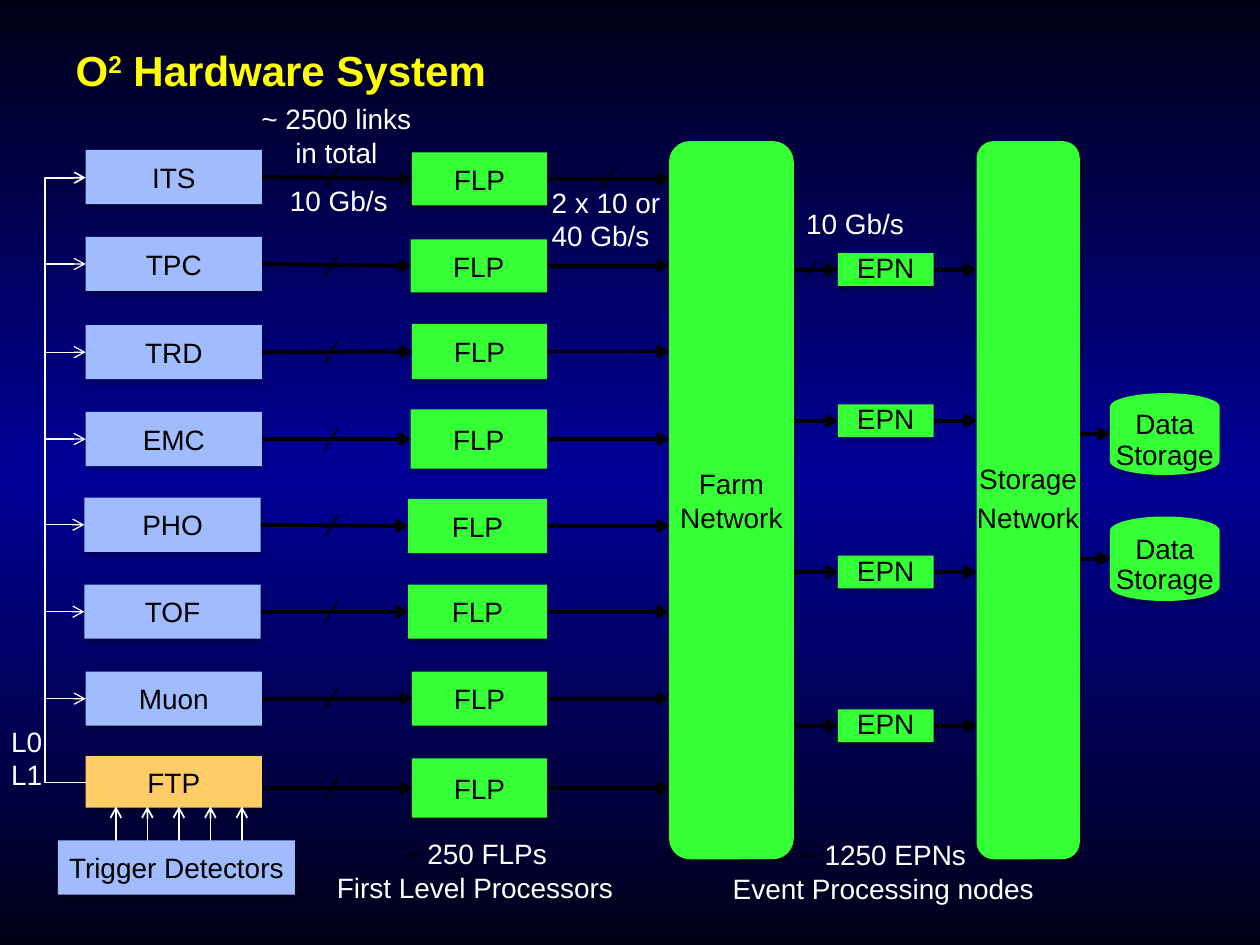
from copy import deepcopy
from typing import NamedTuple

from lxml.etree import SubElement
from pptx import Presentation
from pptx.dml.color import RGBColor
from pptx.enum.shapes import MSO_CONNECTOR as LINK, MSO_SHAPE as SHAPE
from pptx.enum.text import MSO_ANCHOR as ANCHOR, MSO_AUTO_SIZE as FIT, PP_ALIGN as ALIGN
from pptx.oxml.ns import qn
from pptx.util import Inches, Pt

BLACK = RGBColor(0x00, 0x00, 0x00)
WHITE = RGBColor(0xFF, 0xFF, 0xFF)
YELLOW = RGBColor(0xFF, 0xFF, 0x00)
GREEN = RGBColor(0x35, 0xFF, 0x35)
BLUE = RGBColor(0xA0, 0xBC, 0xFE)
ORANGE = RGBColor(0xFF, 0xCC, 0x66)
NIGHT = RGBColor(0x00, 0x00, 0x16)
NAVY = RGBColor(0x00, 0x00, 0x99)

TOP, LEFT, BOTTOM, RIGHT = range(4)
BUS_X, FARM_X, FARM_END, STORAGE_X, STORAGE_END = 0.35, 5.31, 6.3, 7.75, 8.57


class Frame(NamedTuple):
    left: float
    top: float
    width: float
    height: float

    def lengths(self) -> list:
        return [Inches(value) for value in self]


class Row(NamedTuple):
    name: str
    detector: Frame
    processor: Frame
    color: RGBColor = BLUE


class Label(NamedTuple):
    frame: Frame
    paragraphs: list  # each a list of (text, color)
    align: ALIGN = ALIGN.LEFT


ROWS = [
    Row("ITS", Frame(0.68, 1.19, 1.4, 0.43), Frame(3.27, 1.21, 1.07, 0.42)),
    Row("TPC", Frame(0.68, 1.88, 1.4, 0.43), Frame(3.26, 1.9, 1.08, 0.42)),
    Row("TRD", Frame(0.68, 2.58, 1.4, 0.43), Frame(3.27, 2.57, 1.07, 0.44)),
    Row("EMC", Frame(0.68, 3.27, 1.4, 0.43), Frame(3.26, 3.25, 1.08, 0.47)),
    Row("PHO", Frame(0.67, 3.95, 1.4, 0.43), Frame(3.24, 3.96, 1.1, 0.43)),
    Row("TOF", Frame(0.67, 4.64, 1.4, 0.43), Frame(3.24, 4.64, 1.1, 0.43)),
    Row("Muon", Frame(0.68, 5.33, 1.4, 0.43), Frame(3.27, 5.33, 1.07, 0.43)),
    Row("FTP", Frame(0.68, 6, 1.4, 0.41), Frame(3.27, 6.02, 1.07, 0.47), ORANGE),
]
LABELS = [
    Label(Frame(4.28, 1.42, 1.14, 0.64), [[("2 x 10 or \n40 Gb/s", WHITE)]]),
    Label(Frame(2.14, 1.41, 1.05, 0.37), [[(" ", BLACK), ("10 Gb/s", WHITE)]]),
    Label(Frame(-0.01, 5.7, 0.45, 0.64), [[("L0\nL1", WHITE)]]),
    Label(Frame(1.97, 0.76, 1.4, 0.64), [[("~ 2500 links\nin total", WHITE)]], ALIGN.CENTER),
    Label(Frame(2.56, 6.59, 2.42, 0.64),
          [[("~ ", BLACK), ("250 FLPs", WHITE)], [("First Level Processors", WHITE)]], ALIGN.CENTER),
    Label(Frame(6.3, 1.59, 0.99, 0.37), [[("10 Gb/s", WHITE)]]),
    Label(Frame(5.7, 6.6, 2.62, 0.64),
          [[("~ ", BLACK), ("1250 EPNs", WHITE)], [("Event Processing nodes", WHITE)]], ALIGN.CENTER),
]


def add_span(para, text: str, color: RGBColor, size: int = 16):
    """Add text as runs, with a line break at each newline."""
    for index, line in enumerate(text.split("\n")):
        if index:
            para.add_line_break()
        span = para.add_run()
        span.text = line
        span.font.name = "Arial"
        span.font.size = Pt(size)
        span.font.color.rgb = color
    return span


def write(frame, paragraphs: list, align: ALIGN, tight: bool = False) -> None:
    for index, spans in enumerate(paragraphs):
        para = frame.add_paragraph() if index else frame.paragraphs[0]
        para.alignment = align
        if tight:
            para.line_spacing = 0.9
            para.space_before = Pt(4.8)
        for text, color in spans:
            add_span(para, text, color)


def add_label(page, label: Label) -> None:
    box = page.shapes.add_textbox(*label.frame.lengths())
    box.text_frame.word_wrap = False
    box.text_frame.auto_size = FIT.SHAPE_TO_FIT_TEXT
    write(box.text_frame, label.paragraphs, label.align)


def add_block(page, frame: Frame, lines: list, color: RGBColor = GREEN,
              kind: SHAPE = SHAPE.RECTANGLE, inset: float = 0.2, tight: bool = False):
    box = page.shapes.add_shape(kind, *frame.lengths())
    box.fill.solid()
    box.fill.fore_color.rgb = color
    box.line.fill.background()
    box.shadow.inherit = False
    effects = box._element.spPr.find(qn("a:effectLst"))
    shadow = SubElement(effects, qn("a:outerShdw"), blurRad=str(Pt(3.1)), dist=str(Pt(1.8)),
                        dir="5400000", rotWithShape="0")
    tint = SubElement(shadow, qn("a:srgbClr"), val="000000")
    SubElement(tint, qn("a:alpha"), val="35000")
    text = box.text_frame
    text.word_wrap = False
    text.vertical_anchor = ANCHOR.MIDDLE
    text.margin_left = text.margin_right = Inches(inset)
    write(text, [[(line, BLACK)] for line in lines], ALIGN.CENTER, tight)
    return box


def add_line(page, x1: float, y1: float, x2: float, y2: float, color: RGBColor = BLACK,
             width: float = 2.25, arrow: bool = True, kind: LINK = LINK.STRAIGHT):
    line = page.shapes.add_connector(kind, *(Inches(value) for value in (x1, y1, x2, y2)))
    line.line.color.rgb = color
    line.line.width = Pt(width)
    if arrow:
        SubElement(line._element.spPr.find(qn("a:ln")), qn("a:tailEnd"), type="arrow")
    SubElement(line._element.spPr, qn("a:effectLst"))
    return line


def add_slash(page, x: float, y: float, width: float = 0.1, height: float = 0.17) -> None:
    """Mark a link as a bundle, centred on x, y."""
    add_line(page, x + width / 2, y - height / 2, x - width / 2, y + height / 2, width=1, arrow=False)


def middle(frame: Frame) -> float:
    return frame.top + frame.height / 2


def add_row(page, row: Row) -> None:
    detector = add_block(page, row.detector, [row.name], row.color, inset=0.05)
    processor = add_block(page, row.processor, ["FLP"])
    y = middle(row.processor)
    trigger = row.name == "FTP"
    link = add_line(page, row.detector.left + row.detector.width, y, row.processor.left, y)
    if not trigger:
        link.begin_connect(detector, RIGHT)
    link.end_connect(processor, LEFT)
    add_line(page, 4.34, y, FARM_X, y).begin_connect(processor, RIGHT)
    add_slash(page, 2.63, y)
    if not trigger and row.name != "ITS":  # these two are ends of the trigger bus
        y = middle(row.detector)
        add_line(page, BUS_X, y, row.detector.left, y, WHITE, 0.75).end_connect(detector, LEFT)


def set_background(page) -> None:
    fill = page.background.fill
    fill.gradient()
    fill.gradient_angle = 90
    stops = page._element.find(".//" + qn("a:gsLst"))
    stops.append(deepcopy(stops[-1]))
    for stop, color, position in zip(fill.gradient_stops, (NIGHT, NAVY, NIGHT), (0, 0.5, 1)):
        stop.color.rgb = color
        stop.position = position


def add_title(page) -> None:
    title = page.shapes.title
    title.left, title.top, title.width, title.height = Frame(0.5, 0.3, 9, 1.25).lengths()
    title.text_frame.vertical_anchor = ANCHOR.TOP
    para = title.text_frame.paragraphs[0]
    para.alignment = ALIGN.LEFT
    for text in ("O", "2", " Hardware System"):
        span = add_span(para, text, YELLOW, 24)
        span.font.bold = True
        if text == "2":
            span.font._element.set("baseline", "30000")


def main() -> None:
    deck = Presentation()
    deck.slide_width, deck.slide_height = Inches(10), Inches(7.5)
    page = deck.slides.add_slide(deck.slide_layouts[5])
    set_background(page)
    add_title(page)

    # Detectors and first level processors
    for row in ROWS:
        add_row(page, row)
    add_slash(page, 4.83, 1.41)

    # Trigger bus, turned half round so that it runs from FTP up to ITS
    bus = add_line(page, 0.68, 1.41, 0.69, 6.21, WHITE, 1, kind=LINK.ELBOW)
    bus._element.spPr.find(qn("a:xfrm")).set("rot", "10800000")
    guides = bus._element.spPr.find(qn("a:prstGeom")).find(qn("a:avLst"))
    SubElement(guides, qn("a:gd"), name="adj1", fmla="val 3400000")

    # Trigger detectors
    for index in range(5):
        x = 0.92 + 0.25 * index
        add_line(page, x, 6.7, x, 6.4, WHITE, 1)
    add_block(page, Frame(0.46, 6.67, 1.88, 0.43), ["Trigger Detectors"], BLUE, inset=0.05)

    # Event processing nodes
    for top in (2.01, 3.21, 4.41, 5.63):
        frame = Frame(6.65, top, 0.76, 0.26)
        node = add_block(page, frame, ["EPN"], tight=True)
        y = middle(frame)
        add_line(page, FARM_END, y, frame.left, y).end_connect(node, LEFT)
        add_line(page, frame.left + frame.width, y, STORAGE_X, y).begin_connect(node, RIGHT)
    add_slash(page, 6.44, 2.14, 0.08, 0.14)

    # Networks and data storage
    add_block(page, Frame(FARM_X, 1.12, 0.99, 5.7), ["Farm", "Network"], kind=SHAPE.ROUNDED_RECTANGLE)
    add_block(page, Frame(STORAGE_X, 1.12, 0.82, 5.7), ["Storage", "Network"],
              kind=SHAPE.ROUNDED_RECTANGLE, tight=True)
    for frame in (Frame(8.81, 3.12, 0.87, 0.65), Frame(8.81, 4.1, 0.87, 0.67)):
        add_block(page, frame, ["Data\nStorage"], kind=SHAPE.FLOWCHART_MAGNETIC_DISK, tight=True)
        y = middle(frame)
        add_line(page, STORAGE_END, y, frame.left, y)

    for label in LABELS:
        add_label(page, label)
    deck.save("out.pptx")


if __name__ == "__main__":
    main()
